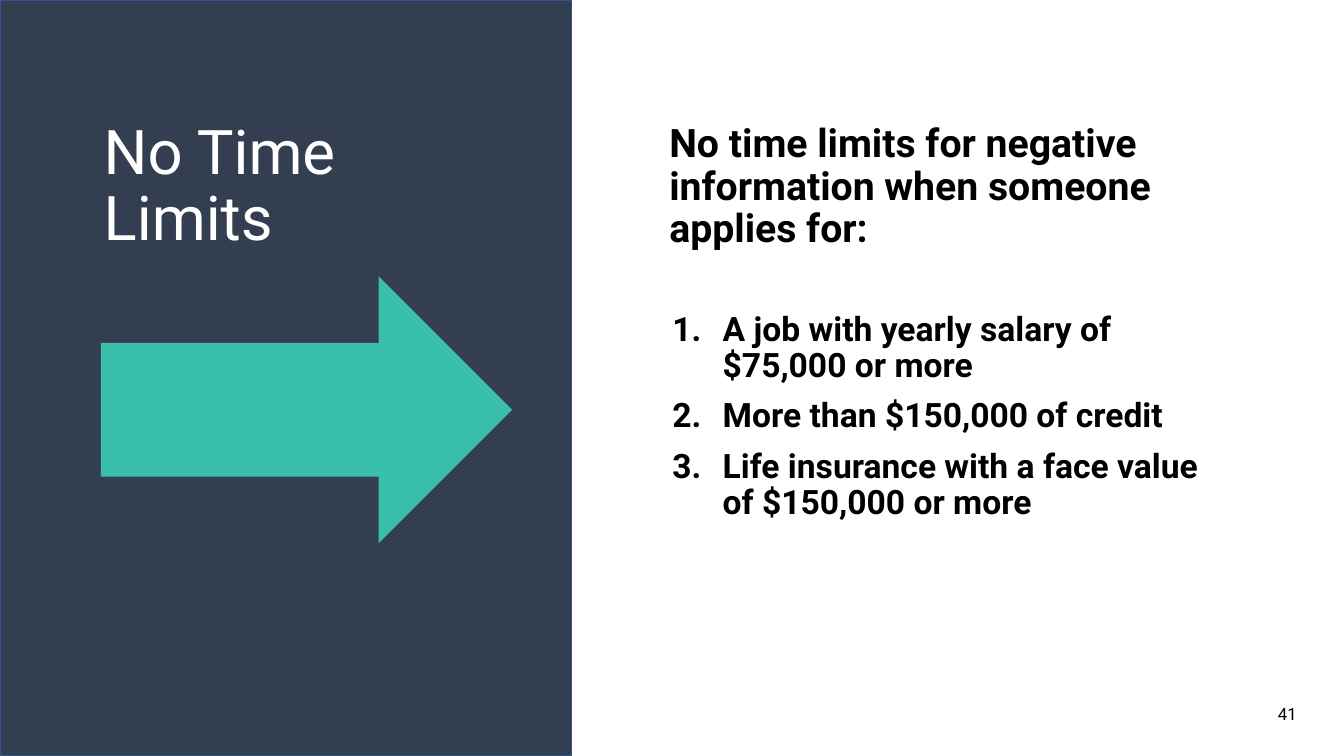
from dataclasses import dataclass

from lxml import etree
from pptx import Presentation
from pptx.dml.color import RGBColor
from pptx.enum.shapes import MSO_SHAPE
from pptx.enum.text import MSO_ANCHOR, PP_ALIGN
from pptx.oxml.ns import qn
from pptx.util import Inches, Pt

RECTANGLE = MSO_SHAPE.RECTANGLE
RIGHT_ARROW = MSO_SHAPE.RIGHT_ARROW
TOP, MIDDLE = MSO_ANCHOR.TOP, MSO_ANCHOR.MIDDLE
LEFT, RIGHT = PP_ALIGN.LEFT, PP_ALIGN.RIGHT

TITLE = "No Time Limits"
HEADING = "No time limits for negative information when someone applies for:"
CASES = [
    "A job with yearly salary of $75,000 or more",
    "More than $150,000 of credit",
    "Life insurance with a face value of $150,000 or more",
]
PAGE_NUMBER = "41"

# Left, top, width, height in inches
PANEL_AREA = (0, 0, 5.67, 7.5)
TITLE_AREA = (0.93, -0.34, 3.95, 4.4)
ARROW_AREA = (1, 2.74, 4.08, 2.65)
HEADING_AREA = (6.54, 1.18, 5.62, 1.37)
CASES_AREA = (6.57, 3.05, 5.56, 2.2)
NUMBER_AREA = (9.96, 6.89, 3, 0.4)


@dataclass(frozen=True)
class Theme:
    font: str = "Roboto"
    panel: str = "333F50"
    panel_edge: str = "325491"
    arrow: str = "3BBFAD"
    light: str = "FFFFFF"
    dark: str = "000000"
    title_size: int = 44
    heading_size: int = 28
    case_size: int = 24
    number_size: int = 12
    line_spacing: float = 0.9
    case_gap: int = 10
    case_indent: float = 0.5


THEME = Theme()


def add_filled_shape(page, kind, area, fill, edge=None):
    shape = page.shapes.add_shape(kind, *map(Inches, area))
    shape.shadow.inherit = False
    shape.fill.solid()
    shape.fill.fore_color.rgb = RGBColor.from_string(fill)
    if edge:
        shape.line.color.rgb = RGBColor.from_string(edge)
        shape.line.width = Pt(1)
    else:
        shape.line.fill.background()


def number_paragraph(para):
    """Give the paragraph automatic numbering with a hanging indent."""
    properties = para._p.get_or_add_pPr()
    indent = Inches(THEME.case_indent)
    properties.set("marL", str(indent))
    properties.set("indent", str(-indent))
    bullet_font = etree.SubElement(properties, qn("a:buFont"))
    bullet_font.set("typeface", "+mj-lt")
    numbering = etree.SubElement(properties, qn("a:buAutoNum"))
    numbering.set("type", "arabicPeriod")


def add_text(page, area, lines, size, color=THEME.dark, bold=False,
             anchor=TOP, align=LEFT, numbered=False):
    box = page.shapes.add_textbox(*map(Inches, area))
    frame = box.text_frame
    frame.word_wrap = True
    frame.vertical_anchor = anchor
    for index, line in enumerate(lines):
        para = frame.paragraphs[0] if index == 0 else frame.add_paragraph()
        para.alignment = align
        para.line_spacing = THEME.line_spacing
        if index > 0:
            para.space_before = Pt(THEME.case_gap)
        if numbered:
            number_paragraph(para)
        span = para.add_run()
        span.text = line
        span.font.name = THEME.font
        span.font.size = Pt(size)
        span.font.bold = bold
        span.font.color.rgb = RGBColor.from_string(color)


def main():
    deck = Presentation()
    deck.slide_width, deck.slide_height = Inches(13.33), Inches(7.5)
    page = deck.slides.add_slide(deck.slide_layouts[6])

    add_filled_shape(page, RECTANGLE, PANEL_AREA, THEME.panel, THEME.panel_edge)
    add_text(page, TITLE_AREA, [TITLE], THEME.title_size, THEME.light, anchor=MIDDLE)
    add_filled_shape(page, RIGHT_ARROW, ARROW_AREA, THEME.arrow)
    add_text(page, HEADING_AREA, [HEADING], THEME.heading_size, bold=True)
    add_text(page, CASES_AREA, CASES, THEME.case_size, bold=True, numbered=True)
    add_text(page, NUMBER_AREA, [PAGE_NUMBER], THEME.number_size,
             anchor=MIDDLE, align=RIGHT)

    deck.save("out.pptx")


if __name__ == "__main__":
    main()
